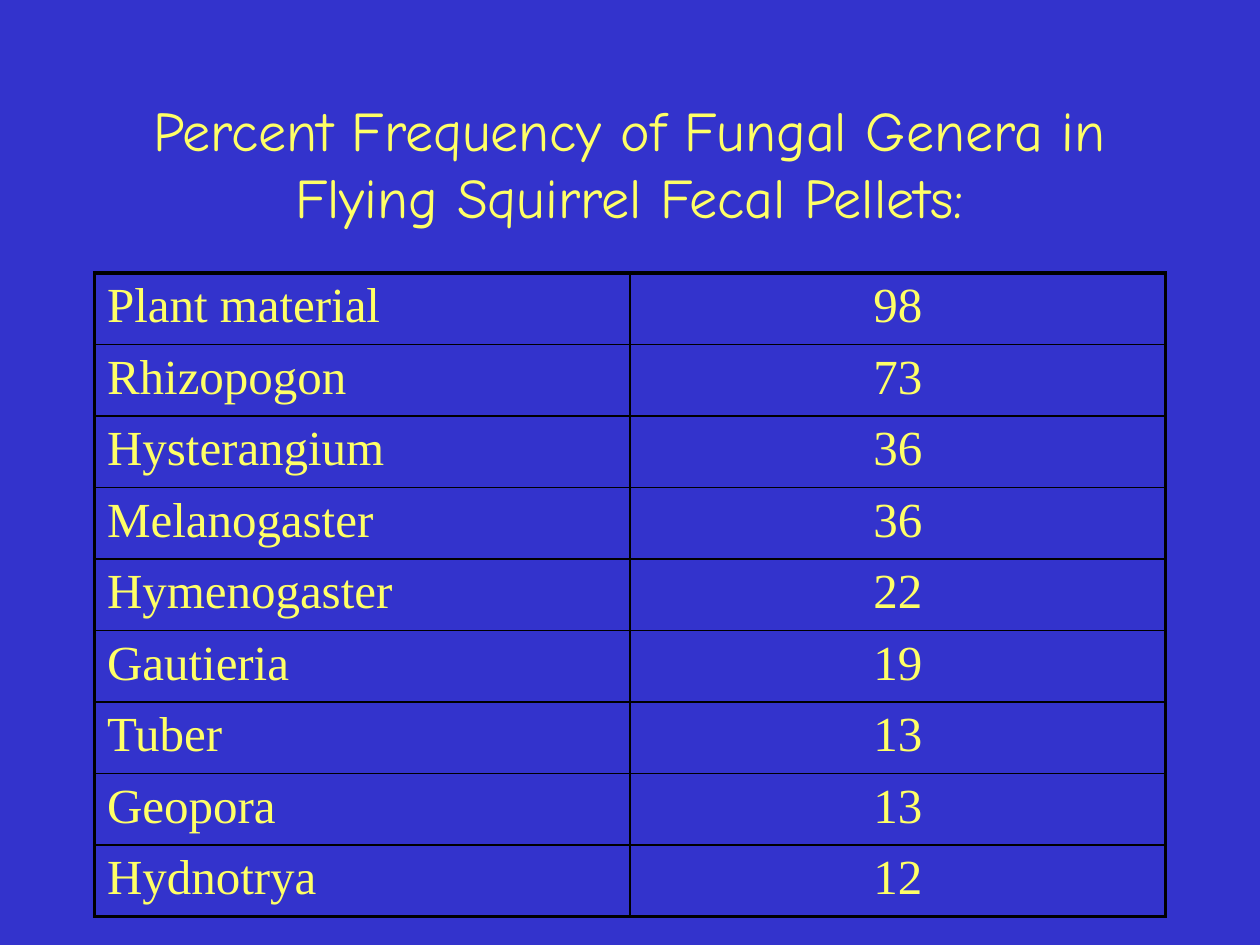
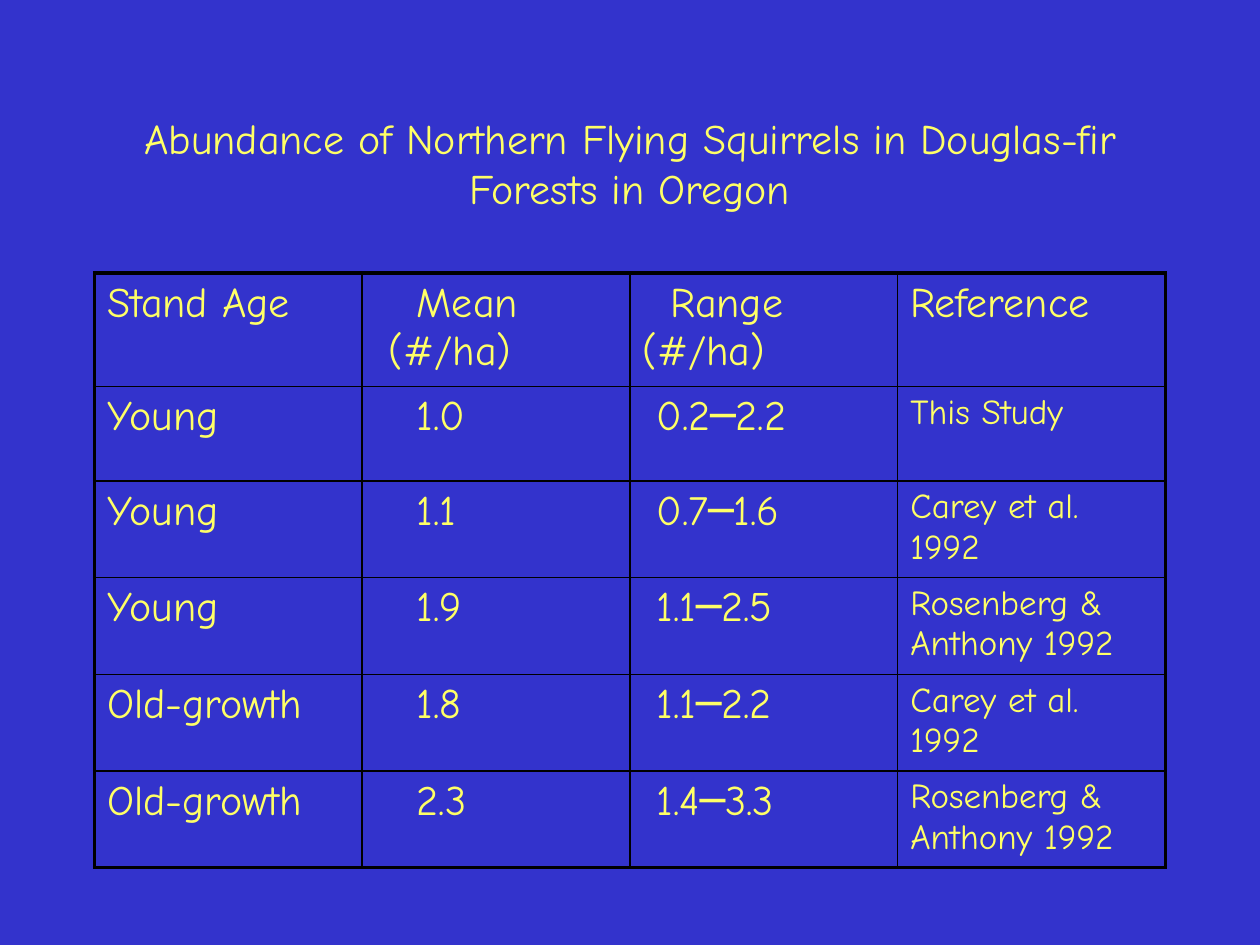
from lxml import etree
from pptx import Presentation
from pptx.dml.color import RGBColor
from pptx.enum.text import MSO_ANCHOR, PP_ALIGN
from pptx.oxml.ns import qn
from pptx.util import Pt

LEFT = PP_ALIGN.LEFT
CENTER = PP_ALIGN.CENTER
MIDDLE = MSO_ANCHOR.MIDDLE

# Shared look
BLUE = RGBColor(0x33, 0x33, 0xCC)
YELLOW = RGBColor(0xFF, 0xFF, 0x66)
BLACK = RGBColor(0x00, 0x00, 0x00)
COMIC = "Comic Neue"
TIMES = "Times New Roman"
CONTENT_LEFT, CONTENT_WIDTH = 54, 612
TITLE_TOP, TITLE_HEIGHT = 48, 90
TABLE_TOP = 156
OUTER_LINE, INNER_LINE = 2.25, 1

# Slide content
GENERA = [
    ("Plant material", "98"),
    ("Rhizopogon", "73"),
    ("Hysterangium", "36"),
    ("Melanogaster", "36"),
    ("Hymenogaster", "22"),
    ("Gautieria", "19"),
    ("Tuber", "13"),
    ("Geopora", "13"),
    ("Hydnotrya", "12"),
]
ABUNDANCE = [
    ("Stand Age", "Mean\v(#/ha)", "Range\v(#/ha)", "Reference"),
    ("Young", "1.0", "0.2─2.2", "This Study"),
    ("Young", "1.1", "0.7─1.6", "Carey et al. 1992"),
    ("Young", "1.9", "1.1─2.5", "Rosenberg & Anthony 1992"),
    ("Old-growth", "1.8", "1.1─2.2", "Carey et al. 1992"),
    ("Old-growth", "2.3", "1.4─3.3", "Rosenberg & Anthony 1992"),
]
# Left margin and first-line indent of each column
HEADER_INDENTS = [(0, 0), (8, 16), (0, 16), (0, 0)]
VALUE_INDENTS = [(0, 0), (24, 0), (8, 0), (0, 0)]


def style_text(paragraph, font_name, size, alignment):
    paragraph.alignment = alignment
    paragraph.font.name = font_name
    paragraph.font.size = Pt(size)
    paragraph.font.color.rgb = YELLOW


def indent_text(paragraph, margin, first_line):
    properties = paragraph._p.get_or_add_pPr()
    properties.set("marL", str(Pt(margin)))
    properties.set("indent", str(Pt(first_line)))


def add_title(slide, text, size):
    box = slide.shapes.add_textbox(
        Pt(CONTENT_LEFT), Pt(TITLE_TOP), Pt(CONTENT_WIDTH), Pt(TITLE_HEIGHT))
    frame = box.text_frame
    frame.word_wrap = True
    frame.vertical_anchor = MIDDLE
    frame.text = text
    style_text(frame.paragraphs[0], COMIC, size, CENTER)


def set_borders(cell, outer_sides):
    """Draw the four sides, thicker where the cell meets the table edge."""
    properties = cell._tc.get_or_add_tcPr()
    for side, is_outer in zip("LRTB", outer_sides):
        width = OUTER_LINE if is_outer else INNER_LINE
        line = etree.SubElement(properties, qn(f"a:ln{side}"), w=str(Pt(width)))
        fill = etree.SubElement(line, qn("a:solidFill"))
        etree.SubElement(fill, qn("a:srgbClr"), val=str(BLACK))


def add_table(slide, rows, row_heights):
    row_count, column_count = len(rows), len(rows[0])
    table = slide.shapes.add_table(
        row_count, column_count, Pt(CONTENT_LEFT), Pt(TABLE_TOP),
        Pt(CONTENT_WIDTH), Pt(sum(row_heights))).table
    table.first_row = False
    table.horz_banding = False
    for row, height in zip(table.rows, row_heights):
        row.height = Pt(height)
    for r, texts in enumerate(rows):
        for c, text in enumerate(texts):
            cell = table.cell(r, c)
            cell.text = text
            set_borders(cell, (c == 0, c == column_count - 1,
                               r == 0, r == row_count - 1))
            cell.fill.background()
    return table


def add_genera_slide(presentation):
    slide = presentation.slides.add_slide(presentation.slide_layouts[6])
    add_title(slide, "Percent Frequency of Fungal Genera in "
                     "Flying Squirrel Fecal Pellets:", 32)
    table = add_table(slide, GENERA, [40.8] * len(GENERA))
    for row in table.rows:
        for cell, alignment in zip(row.cells, (LEFT, CENTER)):
            style_text(cell.text_frame.paragraphs[0], TIMES, 28, alignment)


def add_abundance_slide(presentation):
    slide = presentation.slides.add_slide(presentation.slide_layouts[6])
    add_title(slide, "Abundance of Northern Flying Squirrels in "
                     "Douglas-fir Forests in Oregon", 24)
    table = add_table(slide, ABUNDANCE, [64.8, 54] + [55.2] * 4)
    for r, row in enumerate(table.rows):
        indents = VALUE_INDENTS if r else HEADER_INDENTS
        for c, cell in enumerate(row.cells):
            paragraph = cell.text_frame.paragraphs[0]
            indent_text(paragraph, *indents[c])
            is_reference = r > 0 and c == 3
            style_text(paragraph, COMIC, 20 if is_reference else 24, LEFT)


def main():
    presentation = Presentation()
    presentation.slide_width = Pt(720)
    presentation.slide_height = Pt(540)
    background = presentation.slide_master.background.fill
    background.solid()
    background.fore_color.rgb = BLUE
    add_genera_slide(presentation)
    add_abundance_slide(presentation)
    presentation.save("out.pptx")


if __name__ == "__main__":
    main()
